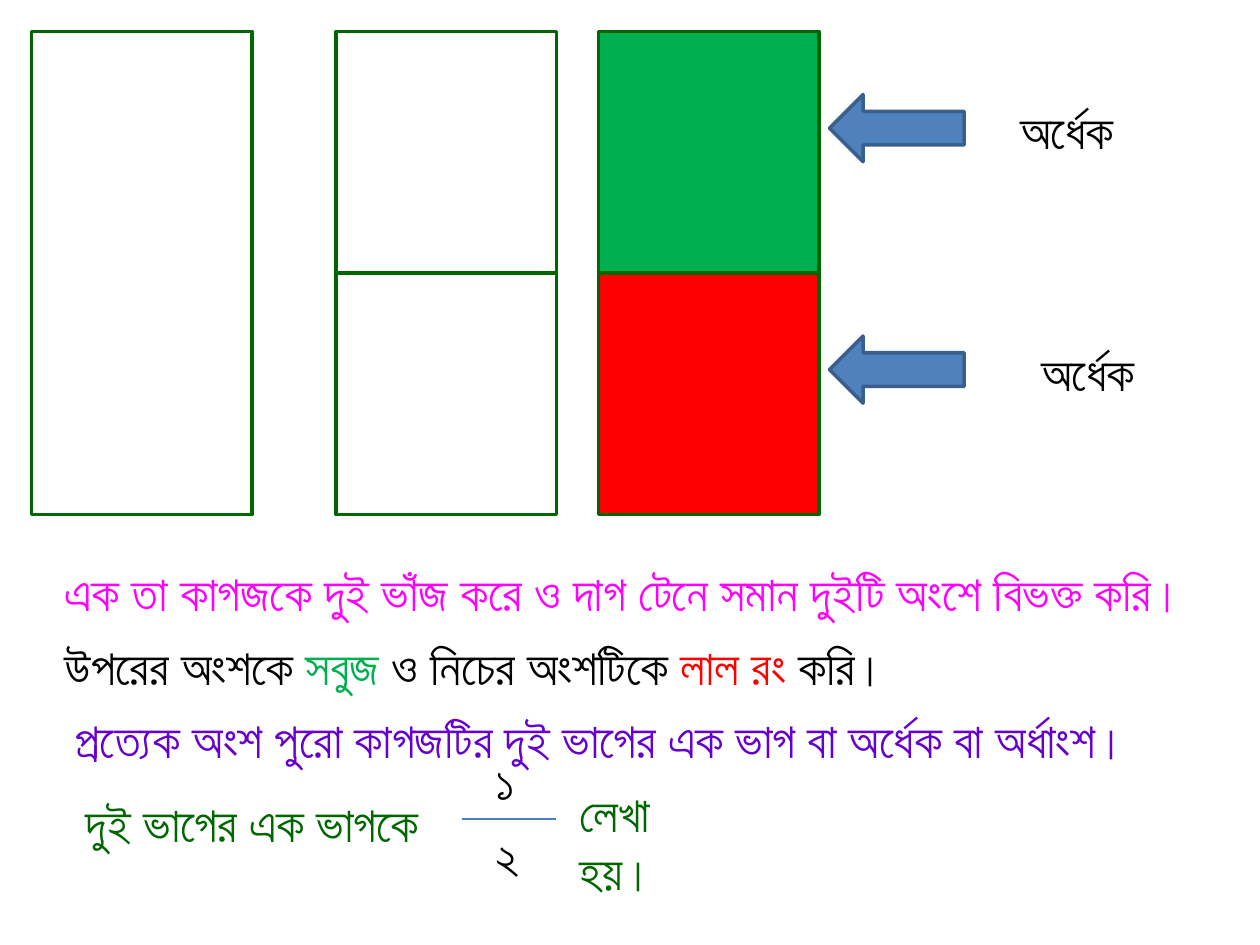
import pptx
import pptx.dml.color
import pptx.enum.shapes
import pptx.enum.text
import pptx.oxml.ns
import pptx.util
from lxml import etree

COLOURS = {
    "black": "000000",
    "white": "FFFFFF",
    "outline": "006600",
    "green": "00B050",
    "red": "FF0000",
    "pink": "FF00FF",
    "purple": "6600CC",
    "arrow": "4F81BD",
    "arrow edge": "3A5F8C",
    "fraction bar": "4B7EBC",
}
SHAPES = pptx.enum.shapes.MSO_SHAPE


class FractionPage:
    """Style and current slide, with a method for each kind of element."""

    font_name = "Lato"
    font_size = 28
    line_width = 2

    def __init__(self, deck):
        self.page = deck.slides.add_slide(deck.slide_layouts[6])

    def colour(self, name):
        return pptx.dml.color.RGBColor.from_string(COLOURS[name])

    def points(self, *lengths):
        return [pptx.util.Pt(length) for length in lengths]

    def shape(self, kind, left, top, width, height, fill, edge):
        shape = self.page.shapes.add_shape(kind, *self.points(left, top, width, height))
        shape.shadow.inherit = False
        shape.fill.solid()
        shape.fill.fore_color.rgb = self.colour(fill)
        shape.line.color.rgb = self.colour(edge)
        shape.line.width = pptx.util.Pt(self.line_width)

    def paper(self, left, top, height, fill="white"):
        self.shape(SHAPES.RECTANGLE, left, top, 126, height, fill, "outline")

    def arrow(self, left, top):
        self.shape(SHAPES.LEFT_ARROW, left, top, 77, 38.4, "arrow", "arrow edge")

    def line(self, left, right, y):
        line = self.page.shapes.add_connector(
            pptx.enum.shapes.MSO_CONNECTOR.STRAIGHT, *self.points(left, y, right, y))
        line.line.color.rgb = self.colour("fraction bar")
        line.line.width = pptx.util.Pt(0.75)
        etree.SubElement(line._element.spPr, pptx.oxml.ns.qn("a:effectLst"))

    def text(self, left, top, width, *parts, wrap=False):
        box = self.page.shapes.add_textbox(*self.points(left, top, width, 41))
        frame = box.text_frame
        frame.word_wrap = wrap
        frame.auto_size = pptx.enum.text.MSO_AUTO_SIZE.SHAPE_TO_FIT_TEXT
        para = frame.paragraphs[0]
        para.font.name = self.font_name
        para.font.size = pptx.util.Pt(self.font_size)
        for words, colour in parts:
            span = para.add_run()
            span.text = words
            if len(parts) > 1:
                span.font.color.rgb = self.colour(colour)
            else:
                para.font.color.rgb = self.colour(colour)


def main():
    deck = pptx.Presentation()
    deck.slide_width = pptx.util.Pt(720)
    deck.slide_height = pptx.util.Pt(540)
    page = FractionPage(deck)

    top, half = 18, 138
    page.paper(18, top, 2 * half)
    for left, fills in ((192, ("white", "white")), (342, ("green", "red"))):
        for row, fill in enumerate(fills):
            page.paper(left, top + row * half, half, fill)

    for row, label_left in enumerate((576, 588)):
        label_top = 54 + row * half
        page.arrow(474, label_top)
        page.text(label_left, label_top, 69, ("অর্ধেক", "black"))

    page.text(30, 318, 667,
              ("এক তা কাগজকে দুই ভাঁজ করে ও দাগ টেনে সমান দুইটি অংশে বিভক্ত করি।", "pink"))
    page.text(30, 360, 501,
              ("উপরের অংশকে ", "black"), ("সবুজ ", "green"),
              ("ও নিচের অংশটিকে ", "black"), ("লাল রং ", "red"), ("করি।", "black"))
    page.text(36, 402, 629,
              ("প্রত্যেক অংশ পুরো কাগজটির দুই ভাগের এক ভাগ বা অর্ধেক বা অর্ধাংশ।", "purple"))
    page.text(42, 450, 208, ("দুই ভাগের এক ভাগকে", "outline"))
    page.text(276, 426, 26, ("১", "black"))
    page.line(264, 318, 468)
    page.text(276, 468, 27, ("২", "black"))
    page.text(324, 444, 94, ("লেখা হয়।", "outline"), wrap=True)

    deck.save("out.pptx")


if __name__ == "__main__":
    main()
